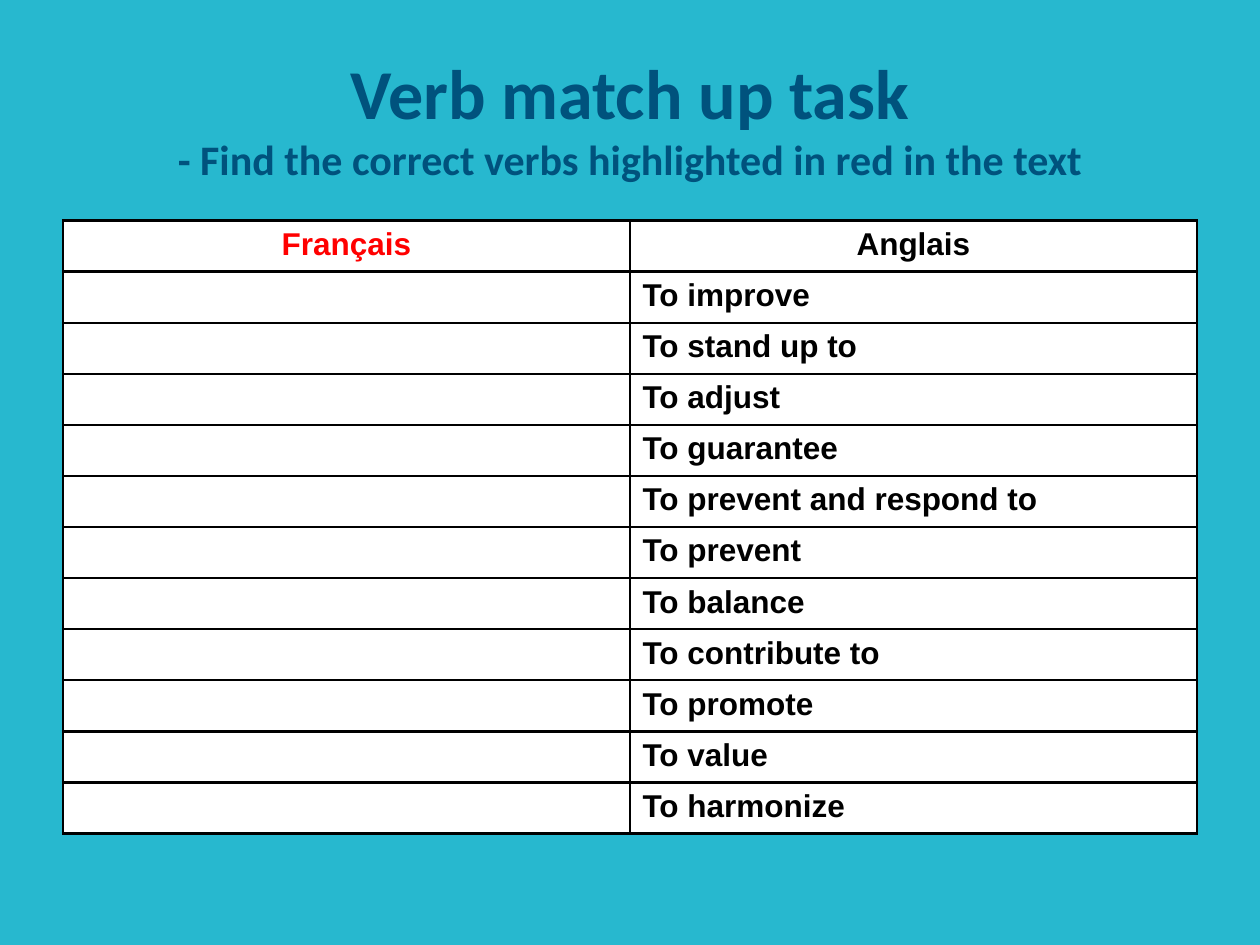
from dataclasses import dataclass

from lxml import etree
from pptx import Presentation
from pptx.dml.color import RGBColor
from pptx.enum import text
from pptx.oxml import ns
from pptx.util import Inches, Pt


@dataclass(frozen=True)
class Theme:
    back: str = "27B8CF"
    title: str = "00527D"
    ink: str = "000000"
    red: str = "FF0000"
    cell: str = "FFFFFF"
    head: str = "Calibri"
    body: str = "Arial"
    big: int = 40
    mid: int = 24
    small: int = 18
    rule: float = 1.5


VERBS = [
    "To improve", "To stand up to", "To adjust", "To guarantee",
    "To prevent and respond to", "To prevent", "To balance",
    "To contribute to", "To promote", "To value", "To harmonize",
]


class Deck:
    """Holds the theme and the slide being filled."""

    def __init__(self, theme):
        self.theme = theme
        self.file = Presentation()
        self.file.slide_width, self.file.slide_height = Inches(10), Inches(7.5)
        self.slide = self.file.slides.add_slide(self.file.slide_layouts[5])
        self.fill(self.slide.background, theme.back)

    def fill(self, part, color):
        part.fill.solid()
        part.fill.fore_color.rgb = RGBColor.from_string(color)

    def run(self, para, words, face, size, color):
        run = para.add_run()
        run.text = words
        font = run.font
        font.name, font.size, font.bold = face, Pt(size), True
        font.color.rgb = RGBColor.from_string(color)

    def title(self, main, sub):
        theme, shape = self.theme, self.slide.shapes.title
        shape.left, shape.top = Inches(0.5), Inches(0.3)
        shape.width, shape.height = Inches(9), Inches(1.25)
        frame = shape.text_frame
        frame.auto_size = text.MSO_AUTO_SIZE.NONE
        frame.vertical_anchor = text.MSO_ANCHOR.MIDDLE
        para = frame.paragraphs[0]
        para.alignment = text.PP_ALIGN.CENTER
        self.run(para, main, theme.head, theme.big, theme.title)
        para.add_line_break()
        self.run(para, sub, theme.head, theme.mid, theme.title)

    def border(self, cell):
        """Rule all four sides; the lines must come before the fill."""
        props = cell._tc.get_or_add_tcPr()
        for spot, side in enumerate(("lnL", "lnR", "lnT", "lnB")):
            line = etree.Element(ns.qn(f"a:{side}"), w=str(Pt(self.theme.rule)))
            solid = etree.SubElement(line, ns.qn("a:solidFill"))
            etree.SubElement(solid, ns.qn("a:srgbClr"), val=self.theme.ink)
            props.insert(spot, line)

    def table(self, rows):
        theme, high = self.theme, Inches(4.87)
        grid = self.slide.shapes.add_table(
            len(rows), 2, Inches(0.5), Inches(1.75), Inches(9), high).table
        for r, row in enumerate(rows):
            grid.rows[r].height = high // len(rows)
            for c, words in enumerate(row):
                cell = grid.cell(r, c)
                self.fill(cell, theme.cell)
                self.border(cell)
                para = cell.text_frame.paragraphs[0]
                if r == 0:
                    para.alignment = text.PP_ALIGN.CENTER
                if words:
                    color = theme.red if c == 0 else theme.ink
                    self.run(para, words, theme.body, theme.small, color)


def main():
    deck = Deck(Theme())
    deck.title("Verb match up task",
               "- Find the correct verbs highlighted in red in the text")
    deck.table([("Français", "Anglais")] + [("", verb) for verb in VERBS])
    deck.file.save("out.pptx")


if __name__ == "__main__":
    main()
